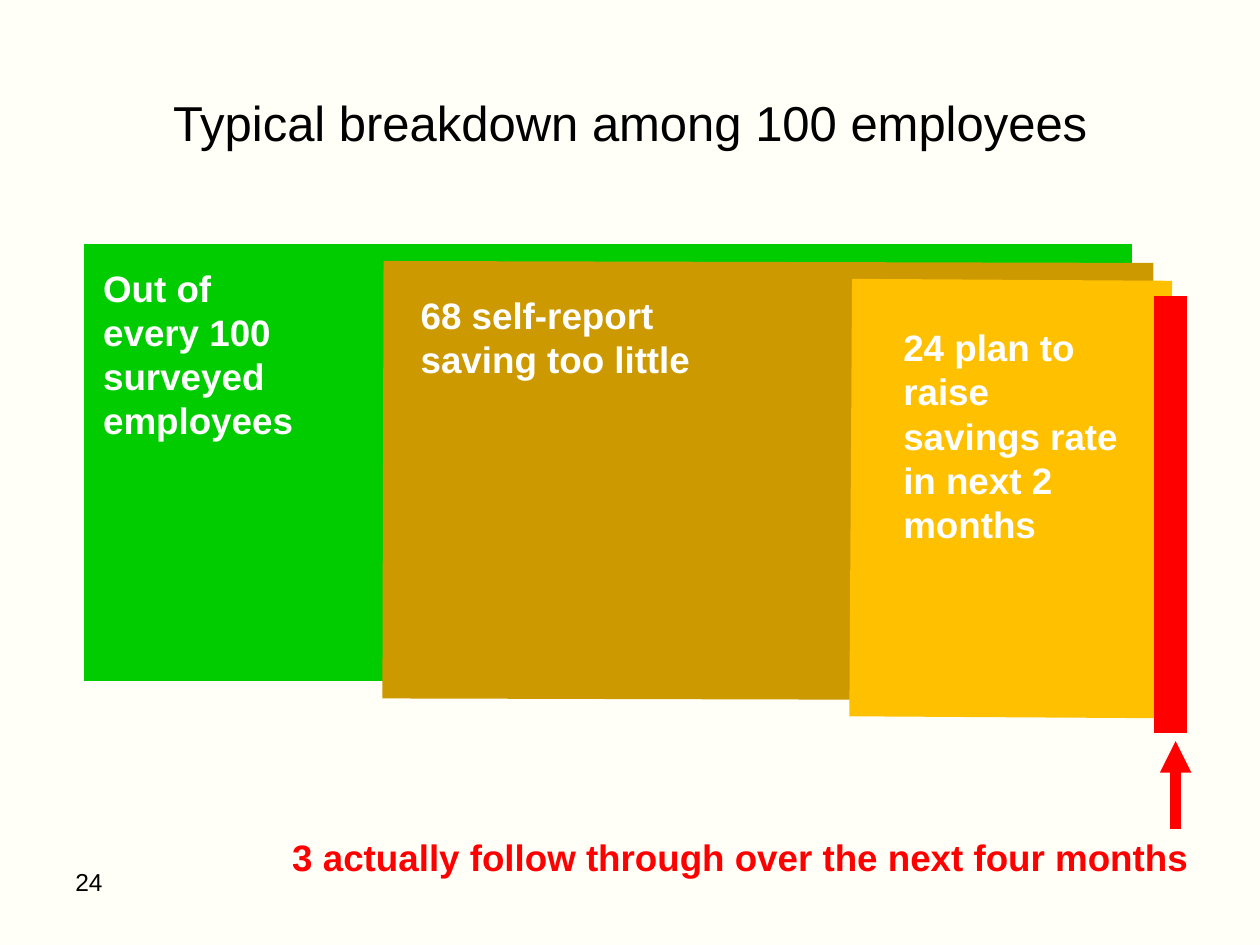
from lxml.etree import SubElement
from pptx import Presentation
from pptx.dml.color import RGBColor
from pptx.enum.shapes import MSO_CONNECTOR as Connector
from pptx.enum.text import MSO_ANCHOR as Anchor, PP_ALIGN as Align
from pptx.oxml.ns import qn
from pptx.util import Cm, Pt

IVORY = RGBColor(0xFF, 0xFF, 0xF7)
BLACK = RGBColor(0x00, 0x00, 0x00)
WHITE = RGBColor(0xFF, 0xFF, 0xFF)
GREEN = RGBColor(0x00, 0xCC, 0x00)
OCHRE = RGBColor(0xCC, 0x99, 0x00)
AMBER = RGBColor(0xFF, 0xC0, 0x00)
RED = RGBColor(0xFF, 0x00, 0x00)


def add_band(start_x, start_y, end_x, end_y, color, thickness):
    band = slide.shapes.add_connector(
        Connector.STRAIGHT, Cm(start_x), Cm(start_y), Cm(end_x), Cm(end_y))
    band.line.color.rgb = color
    band.line.width = Pt(thickness)
    SubElement(band._element.spPr, qn("a:effectLst"))
    return band


def add_label(text, left, top, width, height, size, color,
              bold=False, align=Align.LEFT, anchor=Anchor.TOP):
    label = slide.shapes.add_textbox(Cm(left), Cm(top), Cm(width), Cm(height))
    frame = label.text_frame
    frame.word_wrap = True
    frame.vertical_anchor = anchor
    frame.text = text
    paragraph = frame.paragraphs[0]
    paragraph.alignment = align
    font = paragraph.runs[0].font
    font.name = "Arial"
    font.size = Pt(size)
    font.bold = bold
    font.color.rgb = color


deck = Presentation()
deck.slide_width = Cm(25.4)
deck.slide_height = Cm(19.05)
slide = deck.slides.add_slide(deck.slide_layouts[6])
slide.background.fill.solid()
slide.background.fill.fore_color.rgb = IVORY

add_label("24", 1.27, 17.35, 5.92, 1.27, 14, BLACK)
add_label("Typical breakdown among 100 employees", 1.27, 0.56, 22.86, 2.62, 28, BLACK,
          align=Align.CENTER, anchor=Anchor.BOTTOM)

groups = [
    (1.7, 9.32, 22.83, 9.32, GREEN),
    (7.72, 9.67, 23.24, 9.71, OCHRE),
    (17.15, 10.03, 23.6, 10.07, AMBER),
    (23.27, 10.37, 23.93, 10.37, RED),
]
for start_x, start_y, end_x, end_y, color in groups:
    add_band(start_x, start_y, end_x, end_y, color, 250)

captions = [
    ("Out of every 100 surveyed employees", 1.83, 5.23, 4.52, 3.81),
    ("68 self-report saving too little", 8.23, 5.77, 7.11, 2.03),
    ("24 plan to raise savings rate in next 2 months", 17.96, 6.43, 5.18, 4.7),
]
for text, left, top, width, height in captions:
    add_label(text, left, top, width, height, 21, WHITE, bold=True)

add_label("3 actually follow through over the next four months",
          5.08, 16.71, 19.13, 1.14, 21, RED, bold=True, align=Align.RIGHT)
arrow = add_band(23.7, 16.71, 23.7, 14.94, RED, 6)
SubElement(arrow.line._get_or_add_ln(), qn("a:tailEnd"), type="triangle")

deck.save("out.pptx")
